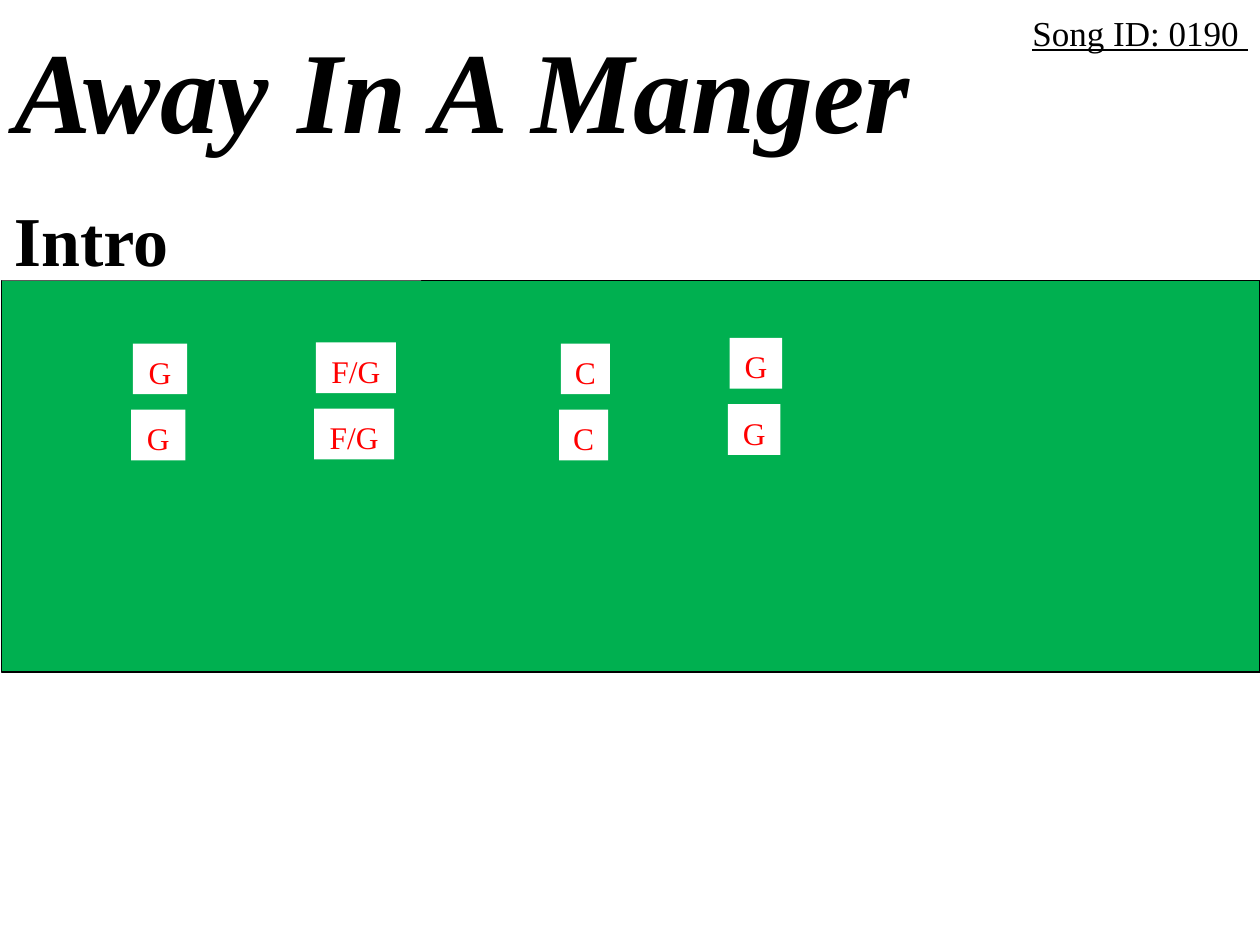
from pptx import Presentation
from pptx.dml.color import RGBColor
from pptx.enum.shapes import MSO_SHAPE
from pptx.enum.text import MSO_ANCHOR, PP_ALIGN
from pptx.util import Pt

RECTANGLE = MSO_SHAPE.RECTANGLE
TOP = MSO_ANCHOR.TOP
LEFT, CENTER, RIGHT = PP_ALIGN.LEFT, PP_ALIGN.CENTER, PP_ALIGN.RIGHT

COLORS = {"paper": "FFFFFF", "ink": "000000", "panel": "00B050", "chord": "FF0000"}
FONT = "Times New Roman"


def add_box(slide, left, top, width, height, fill):
    shape = slide.shapes.add_shape(RECTANGLE, Pt(left), Pt(top), Pt(width), Pt(height))
    shape.shadow.inherit = False
    shape.fill.solid()
    shape.fill.fore_color.rgb = RGBColor.from_string(COLORS[fill])
    shape.line.fill.background()
    return shape


def add_label(slide, box, text, alignment, color, font_format):
    shape = add_box(slide, *box, "paper")
    size = font_format["size"]
    frame = shape.text_frame
    frame_format = {
        "word_wrap": True,
        "vertical_anchor": TOP,
        "margin_left": Pt(7.2),
        "margin_right": Pt(7.2),
        "margin_top": Pt(3.6 + size.pt * 0.1),
        "margin_bottom": Pt(0),
    }
    for name, value in frame_format.items():
        setattr(frame, name, value)
    paragraph = frame.paragraphs[0]
    paragraph.alignment = alignment
    run = paragraph.add_run()
    run.text = text
    run.font.color.rgb = RGBColor.from_string(COLORS[color])
    for name, value in {"name": FONT, **font_format}.items():
        setattr(run.font, name, value)


presentation = Presentation()
presentation.slide_width = Pt(720)
presentation.slide_height = Pt(540)
slide = presentation.slides.add_slide(presentation.slide_layouts[6])

add_label(slide, (1.3, 0, 548, 87.1), "Away In A Manger", LEFT, "ink",
          {"size": Pt(66), "bold": True, "italic": True})
add_label(slide, (432.7, 0.7, 287.3, 31.7), "Song ID: 0190 ", RIGHT, "ink",
          {"size": Pt(20), "underline": True})

panel = add_box(slide, 0.9, 160.3, 719.1, 223.7, "panel")
panel.line.color.rgb = RGBColor.from_string(COLORS["ink"])
panel.line.width = Pt(0.75)

add_label(slide, (0.9, 104.6, 239.8, 55.6), "Intro", LEFT, "ink",
          {"size": Pt(40), "bold": True})

chords = [
    ("G", 76, 196.3, 31),
    ("F/G", 180.5, 195.7, 45.8),
    ("C", 320.5, 196.3, 28),
    ("G", 417, 193.1, 30),
]
for row in range(2):
    for chord, left, top, width in chords:
        add_label(slide, (left - row, top + row * 37.8, width, 29), chord, CENTER, "chord",
                  {"size": Pt(18)})

presentation.save("out.pptx")
